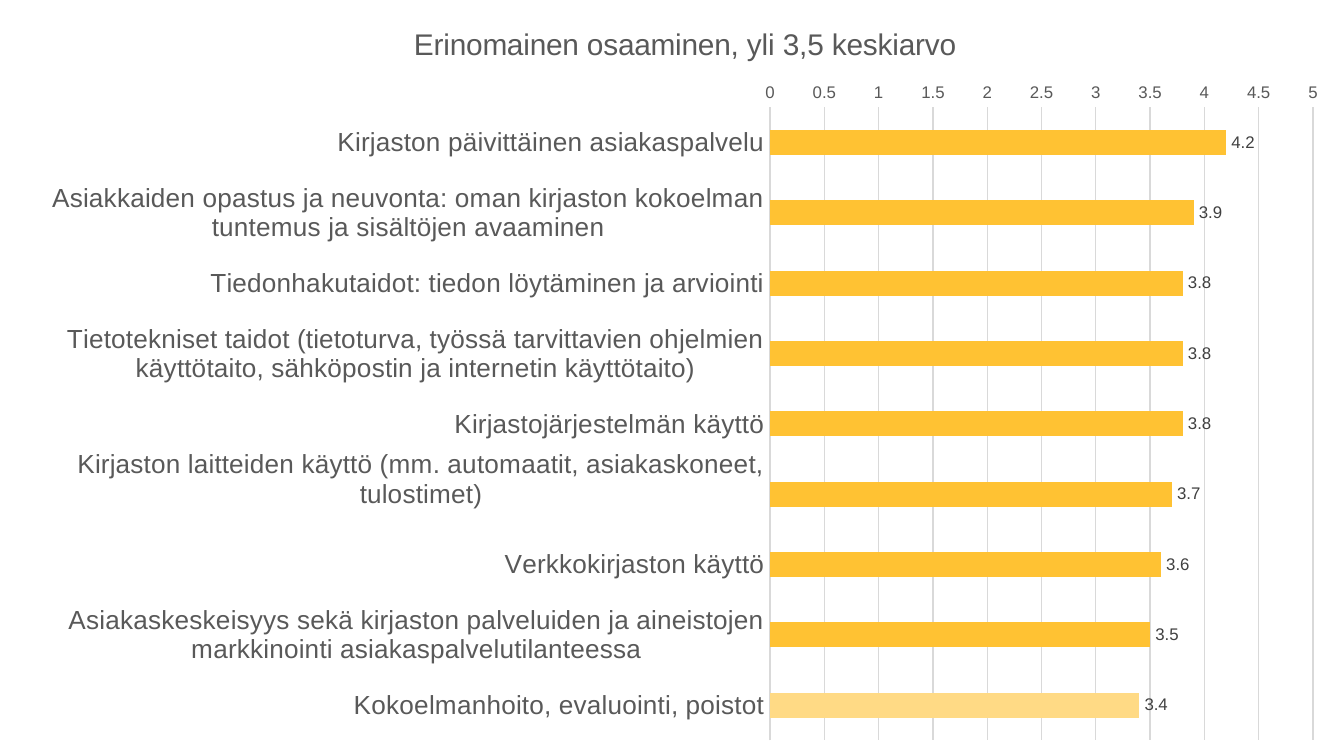
from lxml.etree import SubElement
from pptx import Presentation
from pptx.chart.data import CategoryChartData
from pptx.dml.color import RGBColor
from pptx.enum.chart import XL_CHART_TYPE, XL_LABEL_POSITION, XL_TICK_MARK
from pptx.oxml.ns import qn
from pptx.util import Inches, Pt

SLIDE_WIDTH = Inches(10)
SLIDE_HEIGHT = SLIDE_WIDTH * 9 // 16
CHART_LEFT = Inches(0.2)
CHART_WIDTH = SLIDE_WIDTH - CHART_LEFT
COLORS = {
    "bar": "FFC233",
    "light_bar": "FFDA85",
    "text": "595959",
    "value": "404040",
    "grid": "D9D9D9",
    "base": "000000",
}
TITLE = "Erinomainen osaaminen, yli 3,5 keskiarvo"
SKILLS = [
    ("Kirjaston päivittäinen asiakaspalvelu", 4.2),
    ("Asiakkaiden opastus ja neuvonta: oman kirjaston kokoelman "
     "tuntemus ja sisältöjen avaaminen", 3.9),
    ("Tiedonhakutaidot: tiedon löytäminen ja arviointi", 3.8),
    ("Tietotekniset taidot (tietoturva, työssä tarvittavien ohjelmien "
     "käyttötaito, sähköpostin ja internetin käyttötaito)", 3.8),
    ("Kirjastojärjestelmän käyttö", 3.8),
    ("Kirjaston laitteiden käyttö (mm. automaatit, asiakaskoneet, "
     "tulostimet)\n", 3.7),
    ("Verkkokirjaston käyttö", 3.6),
    ("Asiakaskeskeisyys sekä kirjaston palveluiden ja aineistojen "
     "markkinointi asiakaspalvelutilanteessa", 3.5),
    ("Kokoelmanhoito, evaluointi, poistot", 3.4),
]


def rgb(name):
    return RGBColor.from_string(COLORS[name])


def format_font(font, size, color="text"):
    font.name = "Arial"
    font.size = Pt(size)
    font.bold = False
    font.color.rgb = rgb(color)


def write_text(tf, text, size=16, color="text"):
    r = tf.paragraphs[0].add_run()
    r.text = text
    format_font(r.font, size, color)


def format_line(line):
    line.color.rgb = rgb("grid")
    line.width = Pt(0.75)


def place(parent, left, top, width=None, height=None):
    for old in parent.findall(qn("c:layout")):
        parent.remove(old)
    settings = {"xMode": "edge", "yMode": "edge",
                "x": (Inches(left) - CHART_LEFT) / CHART_WIDTH,
                "y": Inches(top) / SLIDE_HEIGHT}
    if width:
        settings = {"layoutTarget": "inner", **settings,
                    "w": Inches(width) / CHART_WIDTH,
                    "h": Inches(height) / SLIDE_HEIGHT}
    layout = SubElement(parent, qn("c:layout"))
    manual = SubElement(layout, qn("c:manualLayout"))
    for tag, value in settings.items():
        SubElement(manual, qn(f"c:{tag}")).set("val", str(value))
    return layout


def add_title(chart):
    title = chart.chart_title
    write_text(title.text_frame, TITLE)
    title.include_in_layout = False
    element = title._element
    element.find(qn("c:tx")).addnext(place(element, 3.04, 0.15))


def format_axes(chart):
    for axis, size in ((chart.category_axis, 14), (chart.value_axis, 9)):
        axis.major_tick_mark = XL_TICK_MARK.NONE
        axis.minor_tick_mark = XL_TICK_MARK.NONE
        format_font(axis.tick_labels.font, size)
    chart.category_axis.reverse_order = True
    format_line(chart.category_axis.format.line)
    axis = chart.value_axis
    axis.minimum_scale, axis.maximum_scale, axis.major_unit = 0, 5, 0.5
    axis.format.line.fill.background()
    axis.has_major_gridlines = True
    format_line(axis.major_gridlines.format.line)


def format_bars(plot):
    plot.gap_width = 182
    plot.vary_by_categories = False
    series = plot.series[0]
    series.invert_if_negative = False
    last = series.points[len(SKILLS) - 1]
    for part, color in ((series, "bar"), (last, "light_bar")):
        part.format.fill.solid()
        part.format.fill.fore_color.rgb = rgb(color)
    labels = series.data_labels
    labels.show_value = True
    labels.position = XL_LABEL_POSITION.OUTSIDE_END
    format_font(labels.font, 9, "value")


def add_skill_chart(s):
    data = CategoryChartData()
    data.categories = [skill for skill, _ in SKILLS]
    data.add_series("Series 1", [score for _, score in SKILLS])
    chart = s.shapes.add_chart(
        XL_CHART_TYPE.BAR_CLUSTERED,
        CHART_LEFT, 0, CHART_WIDTH, SLIDE_HEIGHT, data,
    ).chart
    chart.has_legend = False
    format_font(chart.font, 10, "base")
    add_title(chart)
    format_axes(chart)
    format_bars(chart.plots[0])
    area = chart._chartSpace.chart.plotArea
    area.insert(0, place(area, 5.73, 0.8, 4.04, 4.71))


def main():
    prs = Presentation()
    prs.slide_width = SLIDE_WIDTH
    prs.slide_height = SLIDE_HEIGHT
    s = prs.slides.add_slide(prs.slide_layouts[6])
    add_skill_chart(s)
    prs.save("out.pptx")


if __name__ == "__main__":
    main()
